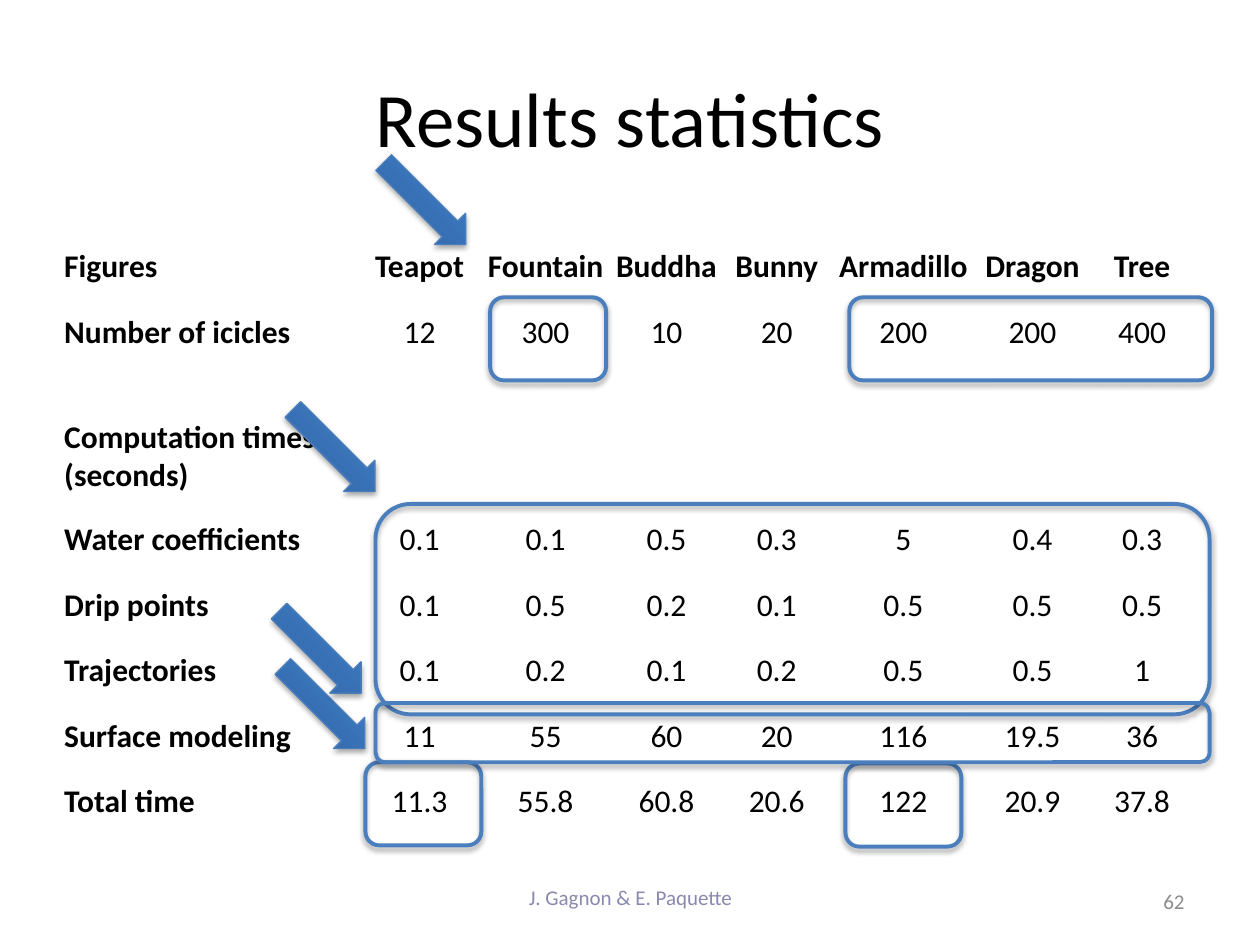
"""Build the results statistics slide with its table and highlights."""
from lxml import etree
from pptx import Presentation
from pptx import util as u
from pptx.dml.color import RGBColor
from pptx.enum import shapes, text
from pptx.oxml import ns

COLOURS = {
    "text": "000000", "author": "8989AF", "number": "8C8C8C",
    "outline": "4B7EBC", "arrow_dark": "2F5F99", "arrow_light": "3D7CC7",
}
FONT = "Calibri"
ROW_HEIGHT = 0.52
COLUMN_WIDTHS = [2.33, 1, 1, 0.92, 0.83, 1.18, 0.87, 0.87]
STATISTICS = [
    ["Figures", "Teapot", "Fountain", "Buddha", "Bunny", "Armadillo", "Dragon", "Tree"],
    ["Number of icicles", "12", "300", "10", "20", "200", "200", "400"],
    [""] * 8,
    ["Computation times (seconds)"] + [""] * 7,
    ["Water coefficients", "0.1", "0.1", "0.5", "0.3", "5", "0.4", "0.3"],
    ["Drip points", "0.1", "0.5", "0.2", "0.1", "0.5", "0.5", "0.5"],
    ["Trajectories", "0.1", "0.2", "0.1", "0.2", "0.5", "0.5", "1"],
    ["Surface modeling", "11", "55", "60", "20", "116", "19.5", "36"],
    ["Total time", "11.3", "55.8", "60.8", "20.6", "122", "20.9", "37.8"],
]
HIGHLIGHTS = [
    ((2.91, 1.44), [(6.74, 2.36, 2.88, 0.66), (3.89, 2.36, 0.92, 0.66)]),
    ((2.11, 5.44), [(2.9, 6.05, 0.92, 0.66), (6.71, 6.06, 0.92, 0.66)]),
    ((2.19, 3.4), [(2.98, 4, 6.62, 1.67)]),
    ((2.08, 5), [(2.98, 5.58, 6.62, 0.47)]),
]


def colour(name):
    """Return a named colour."""
    return RGBColor.from_string(COLOURS[name])


def inches(*lengths):
    """Convert lengths to inches."""
    return [u.Inches(length) for length in lengths]


def style_paragraph(para, size, name="text", align=text.PP_ALIGN.CENTER, bold=False):
    """Set the font and alignment of a paragraph."""
    para.alignment = align
    para.font.name = FONT
    para.font.size = u.Pt(size)
    para.font.bold = bold
    para.font.color.rgb = colour(name)


def add_title(page, words):
    """Fill and place the title placeholder."""
    title = page.shapes.title
    title.left, title.top, title.width, title.height = inches(0.5, 0.3, 9, 1.25)
    title.text_frame.text = words
    title.text_frame.vertical_anchor = text.MSO_ANCHOR.MIDDLE
    style_paragraph(title.text_frame.paragraphs[0], 44)


def add_footer(page, words, place, name, align):
    """Add a small footer text box."""
    frame = page.shapes.add_textbox(*inches(*place)).text_frame
    frame.word_wrap = True
    frame.vertical_anchor = text.MSO_ANCHOR.MIDDLE
    frame.text = words
    style_paragraph(frame.paragraphs[0], 12, name, align)


def fill_cell(cell, words, is_label, is_header):
    """Write one table cell."""
    cell.fill.background()
    cell.margin_left = cell.margin_right = cell.margin_top = u.Inches(0.01)
    cell.margin_bottom = 0
    cell.vertical_anchor = text.MSO_ANCHOR.BOTTOM
    cell.text = words
    align = text.PP_ALIGN.LEFT if is_label else text.PP_ALIGN.CENTER
    style_paragraph(cell.text_frame.paragraphs[0], 18, align=align,
                    bold=is_label or is_header)


def add_statistics(page):
    """Add the table of figures and computation times."""
    place = inches(0.5, 1.75, sum(COLUMN_WIDTHS), ROW_HEIGHT * len(STATISTICS))
    table = page.shapes.add_table(len(STATISTICS), len(COLUMN_WIDTHS), *place).table
    table.first_row = table.horz_banding = False
    for column, width in zip(table.columns, COLUMN_WIDTHS):
        column.width = u.Inches(width)
    for row, values in enumerate(STATISTICS):
        table.rows[row].height = u.Inches(ROW_HEIGHT)
        for column, words in enumerate(values):
            fill_cell(table.cell(row, column), words, column == 0, row == 0)


def add_outlined(group, kind, place, weight):
    """Add a preset shape with the blue outline and soft shadow."""
    shape = group.shapes.add_shape(kind, *inches(*place))
    shape.line.color.rgb = colour("outline")
    shape.line.width = u.Pt(weight)
    shape.shadow.inherit = False
    effects = shape._element.spPr.find(ns.qn("a:effectLst"))
    shadow = etree.SubElement(effects, ns.qn("a:outerShdw"), blurRad="40000",
                              dist="23000", dir="5400000", rotWithShape="0")
    black = etree.SubElement(shadow, ns.qn("a:srgbClr"), val=COLOURS["text"])
    etree.SubElement(black, ns.qn("a:alpha"), val="35000")
    return shape


def add_arrow(group, left, top):
    """Add a diagonal gradient arrow."""
    arrow = add_outlined(group, shapes.MSO_SHAPE.RIGHT_ARROW, (left, top, 0.92, 0.35), 0.75)
    arrow.rotation = 45
    arrow.fill.gradient()
    arrow.fill.gradient_angle = 90
    stops = zip(arrow.fill.gradient_stops, ("arrow_dark", "arrow_light"), (0, 0.8))
    for stop, name, position in stops:
        stop.color.rgb = colour(name)
        stop.position = position


def add_highlight(page, arrow_place, frames):
    """Add a group of one arrow and its rounded frames."""
    group = page.shapes.add_group_shape()
    add_arrow(group, *arrow_place)
    for place in frames:
        frame = add_outlined(group, shapes.MSO_SHAPE.ROUNDED_RECTANGLE, place, 2.25)
        frame.fill.background()


def main():
    """Build and save the slide."""
    deck = Presentation()
    deck.slide_width, deck.slide_height = inches(10, 7.5)
    page = deck.slides.add_slide(deck.slide_layouts[5])
    add_title(page, "Results statistics")
    add_footer(page, "J. Gagnon & E. Paquette", (3.42, 6.92, 3.17, 0.4),
               "author", text.PP_ALIGN.CENTER)
    add_footer(page, "62", (7.17, 6.95, 2.33, 0.4), "number", text.PP_ALIGN.RIGHT)
    add_statistics(page)
    for arrow_place, frames in HIGHLIGHTS:
        add_highlight(page, arrow_place, frames)
    deck.save("out.pptx")


if __name__ == "__main__":
    main()
